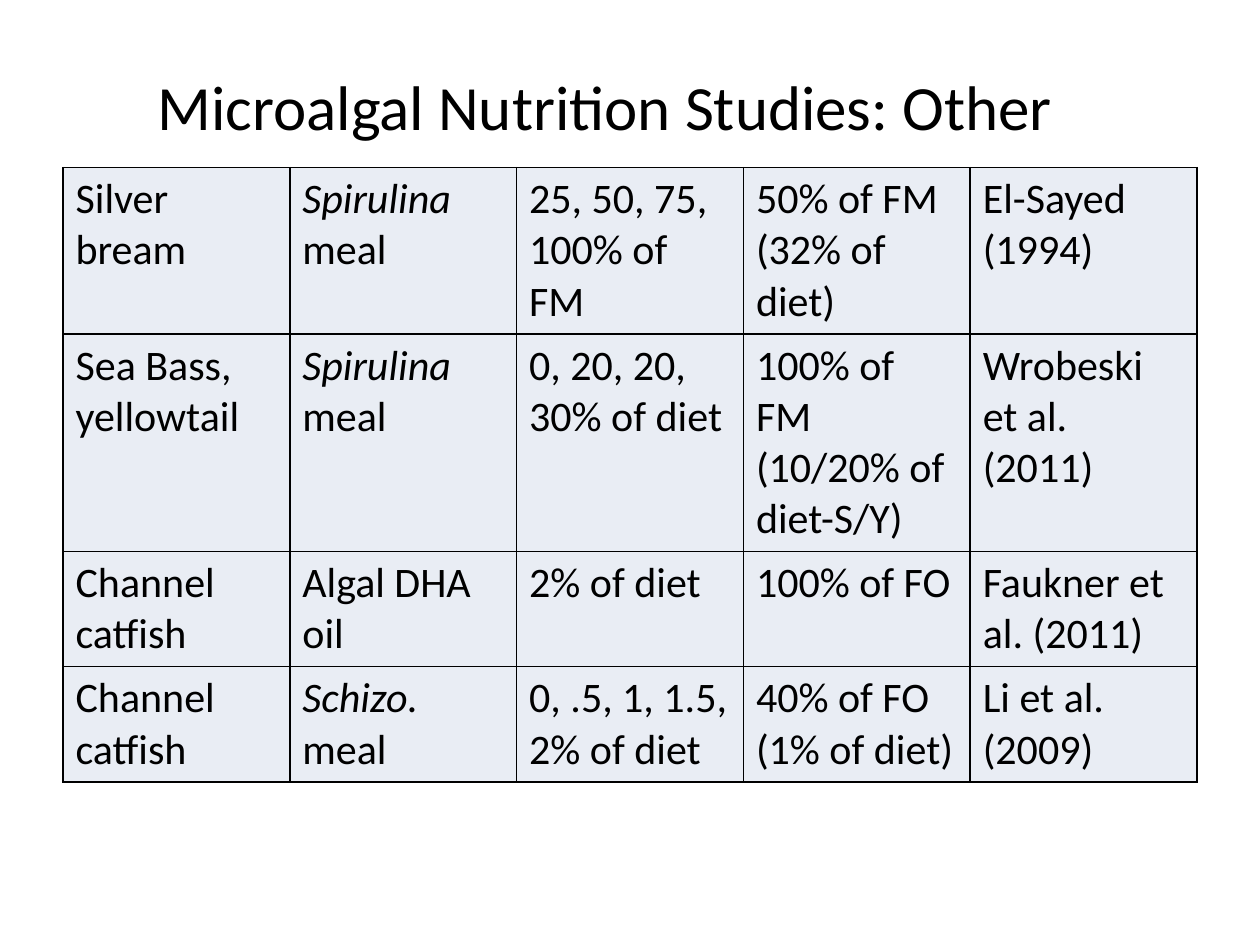
from dataclasses import dataclass

from lxml.etree import SubElement
from pptx import Presentation
from pptx.dml.color import RGBColor
from pptx.enum.text import MSO_ANCHOR, PP_ALIGN
from pptx.oxml.ns import qn
from pptx.slide import Slide
from pptx.table import _Cell
from pptx.text.text import _Paragraph
from pptx.util import Inches, Pt


@dataclass(frozen=True)
class Theme:
    font: str = "Calibri"
    ink: str = "000000"
    cell_fill: str = "E9EDF4"
    title_size: int = 36
    title_tab_size: int = 44
    cell_size: int = 24
    border_width: int = 1


@dataclass(frozen=True)
class Feed:
    name: str
    kind: str
    italic: bool = True


@dataclass(frozen=True)
class Study:
    species: str
    feed: Feed
    levels: str
    replacement: str
    citation: str
    height: float


THEME = Theme()
COLUMN_WIDTH = 1.8
COLUMN_COUNT = 5
STUDIES = (
    Study("Silver bream", Feed("Spirulina", " meal"), "25, 50, 75, 100% of FM",
          "50% of FM (32% of diet)", "El-Sayed (1994)", 1.3),
    Study("Sea Bass, yellowtail", Feed("Spirulina", " meal"), "0, 20, 20, 30% of diet",
          "100% of FM (10/20% of diet-S/Y)", "Wrobeski et al. (2011)", 1.7),
    Study("Channel catfish", Feed("Algal DHA", " oil", italic=False), "2% of diet",
          "100% of FO", "Faukner et al. (2011)", 0.9),
    Study("Channel catfish", Feed("Schizo.", " meal"), "0, .5, 1, 1.5, 2% of diet",
          "40% of FO (1% of diet)", "Li et al. (2009)", 0.9),
)


def add_text(paragraph: _Paragraph, text: str, *, size: int = THEME.cell_size,
             italic: bool = False) -> None:
    run = paragraph.add_run()
    run.text = text
    run.font.name = THEME.font
    run.font.size = Pt(size)
    run.font.italic = italic
    run.font.color.rgb = RGBColor.from_string(THEME.ink)


def style_cell(cell: _Cell) -> None:
    properties = cell._tc.get_or_add_tcPr()
    for side in ("a:lnL", "a:lnR", "a:lnT", "a:lnB"):
        line = SubElement(properties, qn(side), w=str(Pt(THEME.border_width)))
        fill = SubElement(line, qn("a:solidFill"))
        SubElement(fill, qn("a:srgbClr"), val=THEME.ink)
    cell.fill.solid()
    cell.fill.fore_color.rgb = RGBColor.from_string(THEME.cell_fill)


def add_title(slide: Slide) -> None:
    title = slide.shapes.title
    title.left, title.top = Inches(0.5), Inches(0.17)
    title.width, title.height = Inches(9), Inches(1.25)
    title.text_frame.vertical_anchor = MSO_ANCHOR.MIDDLE
    paragraph = title.text_frame.paragraphs[0]
    paragraph.alignment = PP_ALIGN.CENTER
    add_text(paragraph, "Microalgal Nutrition Studies: Other", size=THEME.title_size)
    add_text(paragraph, "\t", size=THEME.title_tab_size)


def add_study_table(slide: Slide, studies: tuple[Study, ...]) -> None:
    frame = slide.shapes.add_table(
        len(studies), COLUMN_COUNT, Inches(0.5), Inches(1.33),
        Inches(COLUMN_WIDTH * COLUMN_COUNT), Inches(sum(study.height for study in studies)))
    table = frame.table
    table.first_row = False
    table.horz_banding = False
    for column in table.columns:
        column.width = Inches(COLUMN_WIDTH)
    for row, study in zip(table.rows, studies):
        row.height = Inches(study.height)
        entries = (study.species, study.feed, study.levels, study.replacement, study.citation)
        for cell, entry in zip(row.cells, entries):
            style_cell(cell)
            paragraph = cell.text_frame.paragraphs[0]
            if isinstance(entry, Feed):
                add_text(paragraph, entry.name, italic=entry.italic)
                add_text(paragraph, entry.kind)
            else:
                add_text(paragraph, entry)


def main() -> None:
    presentation = Presentation()
    presentation.slide_width, presentation.slide_height = Inches(10), Inches(7.5)
    slide = presentation.slides.add_slide(presentation.slide_layouts.get_by_name("Title Only"))
    add_title(slide)
    add_study_table(slide, STUDIES)
    presentation.save("out.pptx")


if __name__ == "__main__":
    main()
